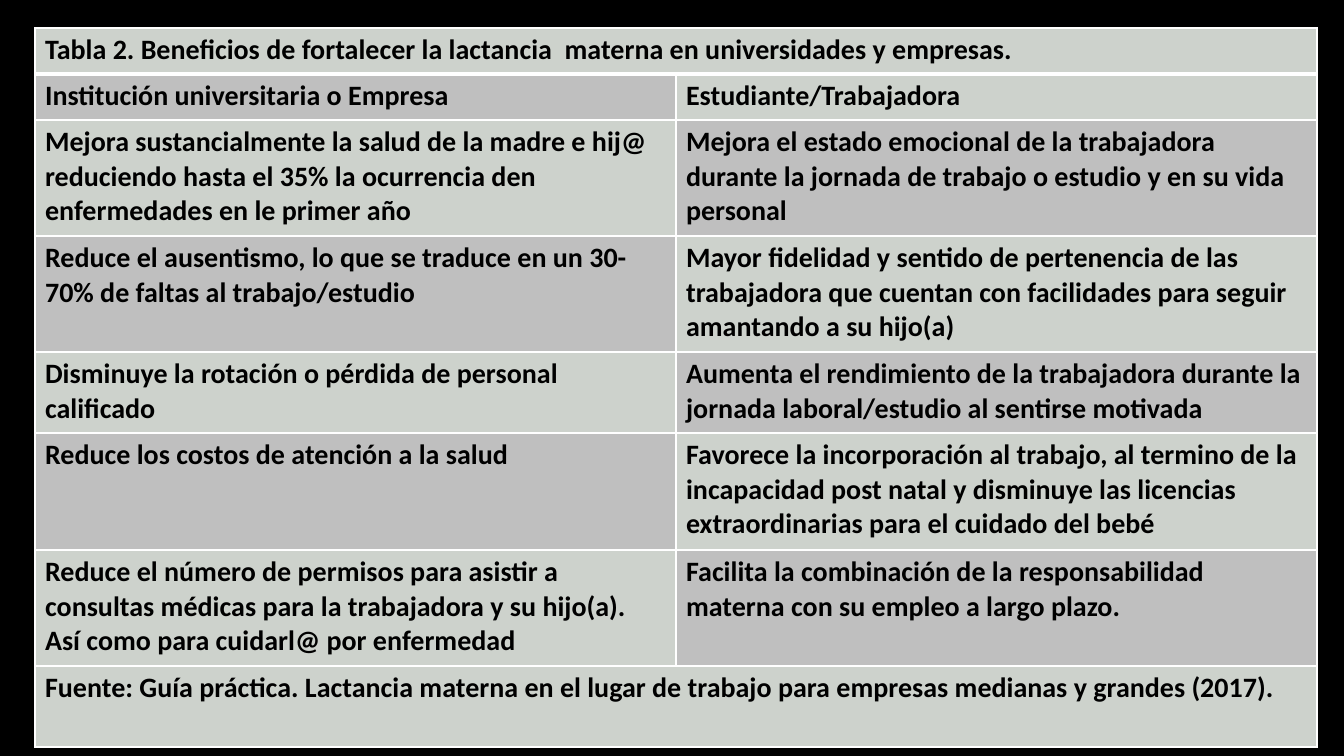
import pptx
import pptx.util
import pptx.dml.color
import pptx.enum.shapes
import pptx.oxml.ns
import lxml.etree

RGBColor = pptx.dml.color.RGBColor
BLACK = RGBColor(0x00, 0x00, 0x00)
WHITE = RGBColor(0xFF, 0xFF, 0xFF)
SAGE = RGBColor(0xCD, 0xD2, 0xCC)
GRAY = RGBColor(0xBF, 0xBF, 0xBF)

WIDTH, HEIGHT = 1344, 756
EMU_PER_PX = 914400 / 100.8

TITLE = "Tabla 2. Beneficios de fortalecer la lactancia  materna en universidades y empresas."
SOURCE = ("Fuente: Guía práctica. Lactancia materna en el lugar de trabajo "
          "para empresas medianas y grandes (2017).")
BENEFITS = [
    ("Institución universitaria o Empresa", "Estudiante/Trabajadora"),
    ("Mejora sustancialmente la salud de la madre e hij@ reduciendo hasta el 35% "
     "la ocurrencia den enfermedades en le primer año",
     "Mejora el estado emocional de la trabajadora durante la jornada de trabajo "
     "o estudio y en su vida personal"),
    ("Reduce el ausentismo, lo que se traduce en un 30-70% de faltas al trabajo/estudio",
     "Mayor fidelidad y sentido de pertenencia de las trabajadora que cuentan con "
     "facilidades para seguir amantando a su hijo(a)"),
    ("Disminuye la rotación o pérdida de personal calificado",
     "Aumenta el rendimiento de la trabajadora durante la jornada laboral/estudio "
     "al sentirse motivada"),
    ("Reduce los costos de atención a la salud",
     "Favorece la incorporación al trabajo, al termino de la incapacidad post natal "
     "y disminuye las licencias extraordinarias para el cuidado del bebé"),
    ("Reduce el número de permisos para asistir a consultas médicas para la "
     "trabajadora y su hijo(a). Así como para cuidarl@ por enfermedad",
     "Facilita la combinación de la responsabilidad materna con su empleo a largo plazo."),
]
ROW_HEIGHTS = [46, 46, 116, 116, 81, 117, 116, 81]
COLUMN_WIDTH = 641


def px(length):
    return pptx.util.Emu(round(length * EMU_PER_PX))


def write(frame, text, font="Calibri", size=20, color=BLACK, bold=True):
    run = frame.paragraphs[0].add_run()
    run.text = text
    run.font.name = font
    run.font.size = pptx.util.Pt(size)
    run.font.color.rgb = color
    run.font.bold = bold


class Builder:
    def __init__(self, slide, border_color=WHITE, border_width=1):
        self.slide = slide
        self.border_color = border_color
        self.border_width = border_width

    def rectangle(self, left, top, width, height, color):
        panel = self.slide.shapes.add_shape(
            pptx.enum.shapes.MSO_SHAPE.RECTANGLE, px(left), px(top), px(width), px(height))
        panel.shadow.inherit = False
        panel.fill.solid()
        panel.fill.fore_color.rgb = color
        panel.line.fill.background()

    def borders(self, cell, **widths):
        properties = cell._tc.get_or_add_tcPr()
        qn = pptx.oxml.ns.qn
        for side in "LRTB":
            width = widths.get(side, self.border_width)
            line = lxml.etree.SubElement(
                properties, qn("a:ln" + side), w=str(pptx.util.Pt(width)))
            fill = lxml.etree.SubElement(line, qn("a:solidFill"))
            lxml.etree.SubElement(fill, qn("a:srgbClr"), val=str(self.border_color))

    def cell(self, cell, color, **widths):
        self.borders(cell, **widths)
        cell.fill.solid()
        cell.fill.fore_color.rgb = color

    def table(self, left, top, column_widths, row_heights):
        table = self.slide.shapes.add_table(
            len(row_heights), len(column_widths), px(left), px(top),
            px(sum(column_widths)), px(sum(row_heights))).table
        for column, width in zip(table.columns, column_widths):
            column.width = px(width)
        for row, height in zip(table.rows, row_heights):
            row.height = px(height)
        return table


def main():
    deck = pptx.Presentation()
    deck.slide_width, deck.slide_height = px(WIDTH), px(HEIGHT)
    builder = Builder(deck.slides.add_slide(deck.slide_layouts[6]))

    # Black backdrop
    builder.rectangle(0, 0, WIDTH, HEIGHT, BLACK)

    # Benefits table
    benefits = builder.table(35, 28, [COLUMN_WIDTH] * 2, ROW_HEIGHTS)
    last = len(ROW_HEIGHTS) - 1

    # Title and source rows span both columns
    for row, text in ((0, TITLE), (last, SOURCE)):
        widths = {"B": 3} if row == 0 else {}
        for column in range(2):
            builder.cell(benefits.cell(row, column), SAGE, **widths)
        benefits.cell(row, 0).merge(benefits.cell(row, 1))
        write(benefits.cell(row, 0).text_frame, text)

    # Checkerboard of benefits under the heavy title rule
    for row, texts in enumerate(BENEFITS, start=1):
        widths = {"T": 3} if row == 1 else {}
        for column, text in enumerate(texts):
            cell = benefits.cell(row, column)
            builder.cell(cell, GRAY if (row + column) % 2 else SAGE, **widths)
            write(cell.text_frame, text)

    deck.save("out.pptx")


if __name__ == "__main__":
    main()
